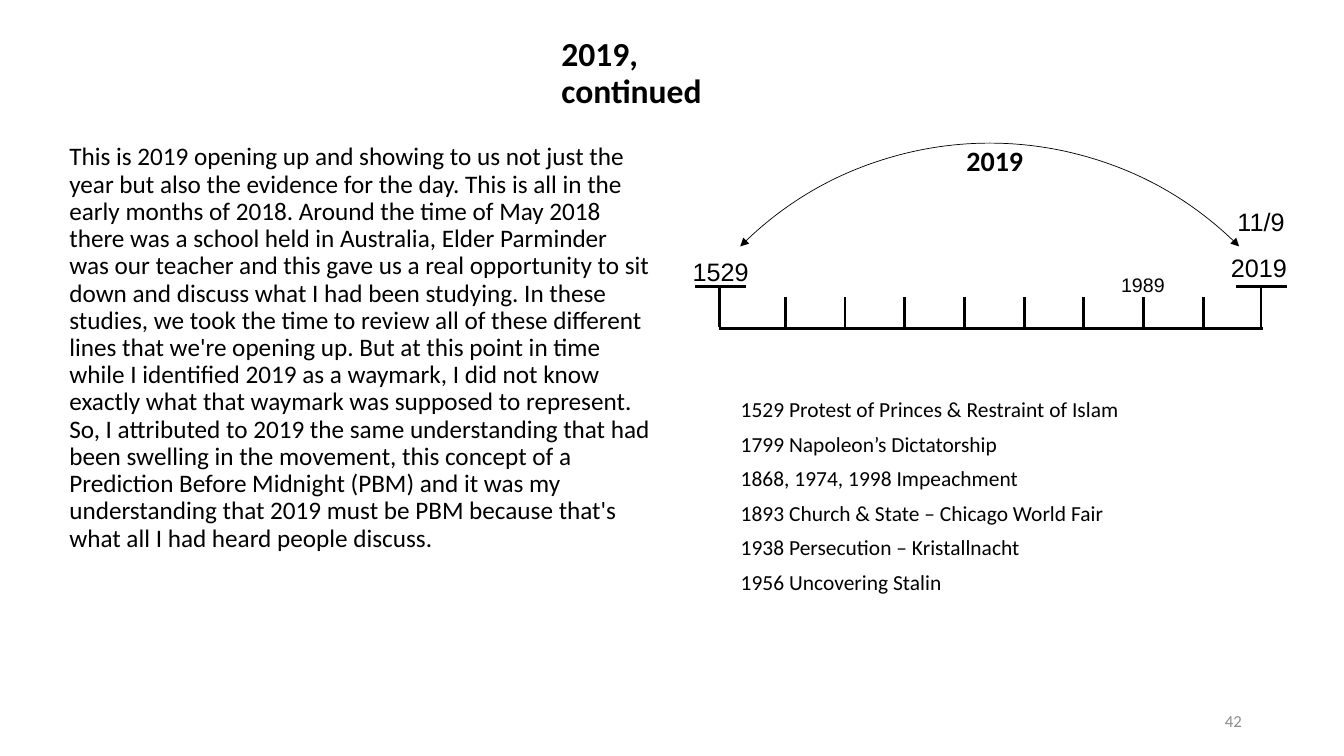
from lxml import etree
from pptx import Presentation
from pptx.dml.color import RGBColor
from pptx.enum.shapes import MSO_CONNECTOR as Connector, MSO_SHAPE as Shape
from pptx.enum.text import MSO_ANCHOR as Anchor, MSO_AUTO_SIZE as AutoSize, PP_ALIGN as Align
from pptx.oxml.ns import qn
from pptx.util import Pt

BLACK = RGBColor(0x00, 0x00, 0x00)
GRAY = RGBColor(0x8C, 0x8C, 0x8C)

STORY = (
    "This is 2019 opening up and showing to us not just the year but also the "
    "evidence for the day. This is all in the early months of 2018. Around the "
    "time of May 2018 there was a school held in Australia, Elder Parminder was "
    "our teacher and this gave us a real opportunity to sit down and discuss what "
    "I had been studying. In these studies, we took the time to review all of "
    "these different lines that we're opening up. But at this point in time while "
    "I identified 2019 as a waymark, I did not know exactly what that waymark was "
    "supposed to represent. So, I attributed to 2019 the same understanding that "
    "had been swelling in the movement, this concept of a Prediction Before "
    "Midnight (PBM) and it was my understanding that 2019 must be PBM because "
    "that's what all I had heard people discuss."
)
EVENTS = [
    "1529 Protest of Princes & Restraint of Islam",
    "1799 Napoleon’s Dictatorship",
    "1868, 1974, 1998 Impeachment",
    "1893 Church & State – Chicago World Fair",
    "1938 Persecution – Kristallnacht",
    "1956 Uncovering Stalin",
]


def write(box, area, lines, size, font="Calibri", color=BLACK, bold=False,
          align=Align.LEFT, anchor=Anchor.TOP, spacing=1.0, before=0, inset=None):
    """Place a text shape and fill it with one paragraph per line."""
    box.left, box.top, box.width, box.height = map(Pt, area)
    frame = box.text_frame
    frame.word_wrap = True
    frame.auto_size = AutoSize.NONE
    frame.vertical_anchor = anchor
    if inset is not None:
        frame.margin_left = frame.margin_right = Pt(inset)
        frame.margin_top = frame.margin_bottom = Pt(inset)
    for index, line in enumerate(lines):
        para = frame.add_paragraph() if index else frame.paragraphs[0]
        para.alignment = align
        para.line_spacing = spacing
        para.space_before = Pt(before)
        span = para.add_run()
        span.text = line
        span.font.name = font
        span.font.size = Pt(size)
        span.font.bold = bold
        span.font.color.rgb = color


deck = Presentation()
deck.slide_width, deck.slide_height = Pt(960), Pt(540)
page = deck.slides.add_slide(deck.slide_layouts[5])
shapes = page.shapes

# Title, story, list of events and page number
write(shapes.title, (393.8, 33.1, 171.4, 39.6), ["2019, continued"], 24,
      bold=True, anchor=Anchor.MIDDLE, spacing=0.9)
story_box = shapes.add_textbox(0, 0, 0, 0)
write(story_box, (42.5, 99.4, 429.8, 365.8), [STORY], 18, spacing=0.9, before=10)
events_box = shapes.add_textbox(0, 0, 0, 0)
write(events_box, (522, 283, 298.8, 149), EVENTS, 15.3, spacing=0.8, before=10)
number_box = shapes.add_textbox(0, 0, 0, 0)
write(number_box, (678.2, 500.4, 216, 28.8), ["42"], 12, color=GRAY,
      align=Align.RIGHT, anchor=Anchor.MIDDLE)

# Timeline: base line, capped end posts and evenly spaced ticks
FIRST_POST, LAST_POST = 514.1, 900.7
CAP_TOP, BASE = 204.6, 234.7
TICK_START, TICK_STEP, TICK_COUNT = 560.9, 42.67, 8

timeline = [(FIRST_POST - 0.7, BASE, LAST_POST + 1.5, BASE)]
for post in (FIRST_POST, LAST_POST):
    timeline.append((post - 17.5, CAP_TOP, post + 18.5, CAP_TOP))
    timeline.append((post, CAP_TOP, post, BASE - 1))
for index in range(TICK_COUNT):
    tick = TICK_START + index * TICK_STEP
    timeline.append((tick, 212, tick, BASE - 1))

for ends in timeline:
    line = shapes.add_connector(Connector.STRAIGHT, *map(Pt, ends))
    line.line.color.rgb = BLACK
    line.line.width = Pt(2)
    etree.SubElement(line.element.spPr, qn("a:effectLst"))

# Labels
LABELS = [
    ("2019", (875.5, 177.1, 47.5, 28.1), 18, "Arial", False),
    ("1529", (491, 180, 47.5, 25.9), 18, "Arial", False),
    ("2019", (681.1, 99.4, 59, 28.8), 20, "Calibri", True),
    ("1989", (797, 192.2, 38.9, 20.9), 14, "Arial", False),
    ("11/9", (877, 144.7, 47.5, 28.1), 18, "Arial", False),
]
for text, area, size, font, bold in LABELS:
    label = shapes.add_textbox(0, 0, 0, 0)
    write(label, area, [text], size, font, bold=bold, align=Align.CENTER, inset=2.9)

# Double-headed arc from 1529 to 2019
arc = shapes.add_shape(Shape.ARC, Pt(455), Pt(102.2), Pt(504), Pt(504))
arc.rotation = 315
arc.shadow.inherit = False
arc.fill.background()
arc.line.color.rgb = BLACK
arc.line.width = Pt(0.5)
for end in ("a:headEnd", "a:tailEnd"):
    etree.SubElement(arc.line._get_or_add_ln(), qn(end), type="triangle")

deck.save("out.pptx")
